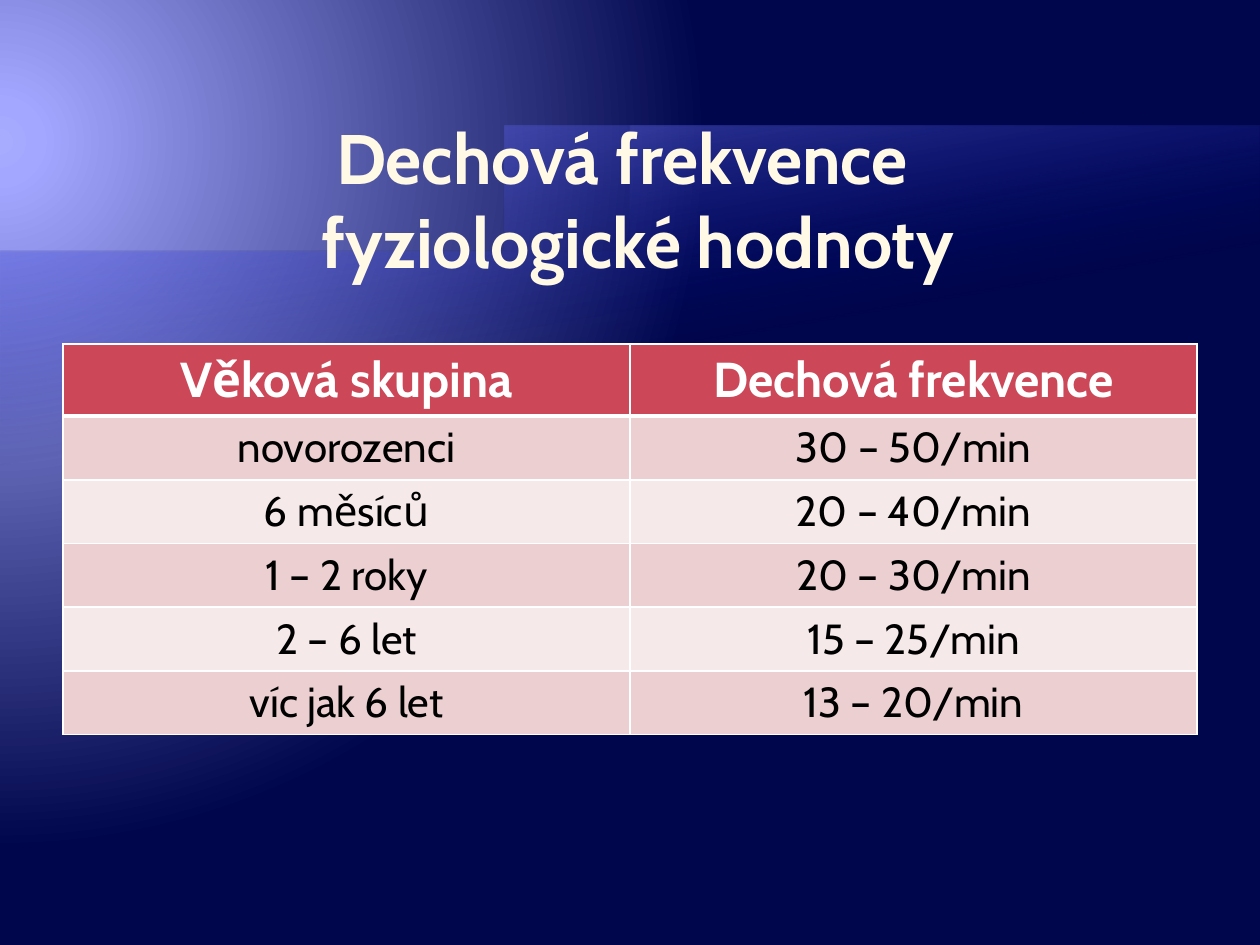
from lxml import etree
from pptx import Presentation
from pptx.dml.color import RGBColor
from pptx.enum.text import MSO_ANCHOR, PP_ALIGN
from pptx.oxml.ns import qn
from pptx.util import Inches, Pt

CENTER = PP_ALIGN.CENTER
BOTTOM, MIDDLE = MSO_ANCHOR.BOTTOM, MSO_ANCHOR.MIDDLE

WIDTH, HEIGHT = Inches(10), Inches(7.5)
MARGIN = Inches(0.5)
ROW_HEIGHT = Inches(0.41)
FONT = "Cabin"

NAVY = RGBColor(0x00, 0x06, 0x4B)
GLOW = RGBColor(0xA8, 0xAC, 0xFF)
LILAC = RGBColor(0xA3, 0xA7, 0xFF)
VIOLET = RGBColor(0x79, 0x7F, 0xFF)
BLUE = RGBColor(0x00, 0x0D, 0x9E)
CREAM = RGBColor(0xFF, 0xF9, 0xE5)
RED = RGBColor(0xCC, 0x47, 0x57)
ROSE = RGBColor(0xEC, 0xCF, 0xD1)
PALE = RGBColor(0xF6, 0xE9, 0xEA)
WHITE = RGBColor(0xFF, 0xFF, 0xFF)
BLACK = RGBColor(0x00, 0x00, 0x00)

TITLE_FORMAT = {"size": Pt(40), "bold": True, "name": FONT}
HEAD_FORMAT = {"size": Pt(28), "bold": True, "name": FONT}
BODY_FORMAT = {"size": Pt(24), "bold": False, "name": FONT}

ROWS = [
    ("Věková skupina", "Dechová frekvence"),
    ("novorozenci", "30 – 50/min"),
    ("6 měsíců", "20 – 40/min"),
    ("1 – 2 roky", "20 – 30/min"),
    ("2 – 6 let", "15 – 25/min"),
    ("víc jak 6 let", "13 – 20/min"),
]

WAVES = [
    (7.33, [(0, 2.13), (5, 2.13), (5.34, 0.05), (10, 1.25)], VIOLET, 55),
    (6.37, [(0, 2.13), (5, 2.13), (5.98, 0.31), (10, 1.47)], LILAC, 30),
]


def add_xml(parent, tag, **attrs):
    return etree.SubElement(parent, qn(tag), {k: str(v) for k, v in attrs.items()})


def set_gradient(parent, stops):
    old = parent.find(qn("a:solidFill"))
    grad = etree.Element(qn("a:gradFill"), rotWithShape="1")
    parent.replace(old, grad)
    gs_list = add_xml(grad, "a:gsLst")
    for pos, color, alpha in stops:
        gs = add_xml(gs_list, "a:gs", pos=pos * 1000)
        clr = add_xml(gs, "a:srgbClr", val=color)
        if alpha < 100:
            add_xml(clr, "a:alpha", val=alpha * 1000)
    return grad


def set_background(s):
    s.background.fill.solid()
    bg = s.element.find(".//" + qn("p:bgPr"))
    grad = set_gradient(bg, [(0, GLOW, 100), (5, LILAC, 100), (90, NAVY, 100)])
    path = add_xml(grad, "a:path", path="circle")
    add_xml(path, "a:fillToRect", l=20000, t=30000, r=135000, b=100000)


def curve_points(controls, steps=60):
    points = []
    for i in range(steps + 1):
        t = i / steps
        weights = ((1 - t) ** 3, 3 * t * (1 - t) ** 2, 3 * t * t * (1 - t), t ** 3)
        points.append(tuple(sum(w * c[axis] for w, c in zip(weights, controls))
                            for axis in (0, 1)))
    return points


def add_wave(s, bottom, controls, color, alpha):
    builder = s.shapes.build_freeform(10, bottom, scale=Inches(1))
    builder.add_line_segments([(0, bottom)] + curve_points(controls), close=True)
    sp = builder.convert_to_shape()
    sp.shadow.inherit = False
    sp.line.fill.background()
    sp.fill.solid()
    grad = set_gradient(sp.element.spPr, [(65, BLUE, 0), (100, color, alpha)])
    add_xml(grad, "a:lin", ang=260 * 60000, scaled=0)
    s.shapes.title.element.addprevious(sp.element)


def write_text(tf, text, color, formats):
    p = tf.paragraphs[0]
    p.text = text
    p.alignment = CENTER
    for r in p.runs:
        for name, value in formats.items():
            setattr(r.font, name, value)
        r.font.color.rgb = color


def set_title(s, text):
    sp = s.shapes.title
    sp.left, sp.top = MARGIN, Inches(0.58)
    sp.width, sp.height = WIDTH - 2 * MARGIN, Inches(1.67)
    tf = sp.text_frame
    frame = {"margin_left": 0, "margin_right": 0, "margin_top": Inches(0.01),
             "margin_bottom": Inches(0.01), "vertical_anchor": BOTTOM, "word_wrap": True}
    for name, value in frame.items():
        setattr(tf, name, value)
    write_text(tf, text, CREAM, TITLE_FORMAT)


def set_borders(cell, widths):
    tc_pr = cell._tc.get_or_add_tcPr()
    for side, width in zip("LRTB", widths):
        ln = add_xml(tc_pr, f"a:ln{side}", w=Pt(width))
        add_xml(add_xml(ln, "a:solidFill"), "a:srgbClr", val=WHITE)


def add_rates_table(s):
    frame = s.shapes.add_table(len(ROWS), 2, MARGIN, Inches(2.73),
                               WIDTH - 2 * MARGIN, ROW_HEIGHT * len(ROWS))
    for i, row in enumerate(ROWS):
        head = i == 0
        fill = RED if head else (PALE, ROSE)[i % 2]
        color, formats = (WHITE, HEAD_FORMAT) if head else (BLACK, BODY_FORMAT)
        for j, text in enumerate(row):
            cell = frame.table.cell(i, j)
            set_borders(cell, (1, 1, 3 if i == 1 else 1, 3 if head else 1))
            cell.fill.solid()
            cell.fill.fore_color.rgb = fill
            write_text(cell.text_frame, text, color, formats)


def main():
    prs = Presentation()
    prs.slide_width, prs.slide_height = WIDTH, HEIGHT
    s = prs.slides.add_slide(prs.slide_layouts[5])
    set_background(s)
    for wave in WAVES:
        add_wave(s, *wave)
    set_title(s, "Dechová frekvence \v fyziologické hodnoty")
    add_rates_table(s)
    prs.save("out.pptx")


if __name__ == "__main__":
    main()
